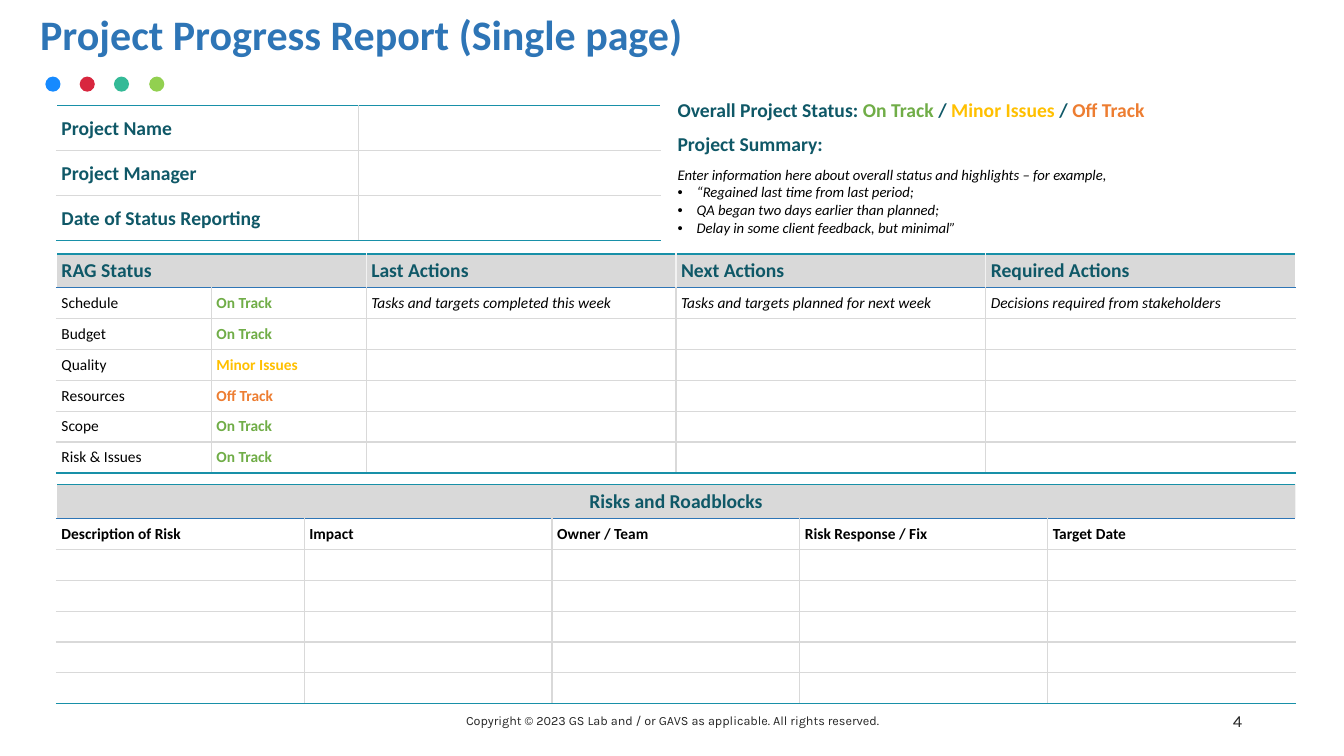
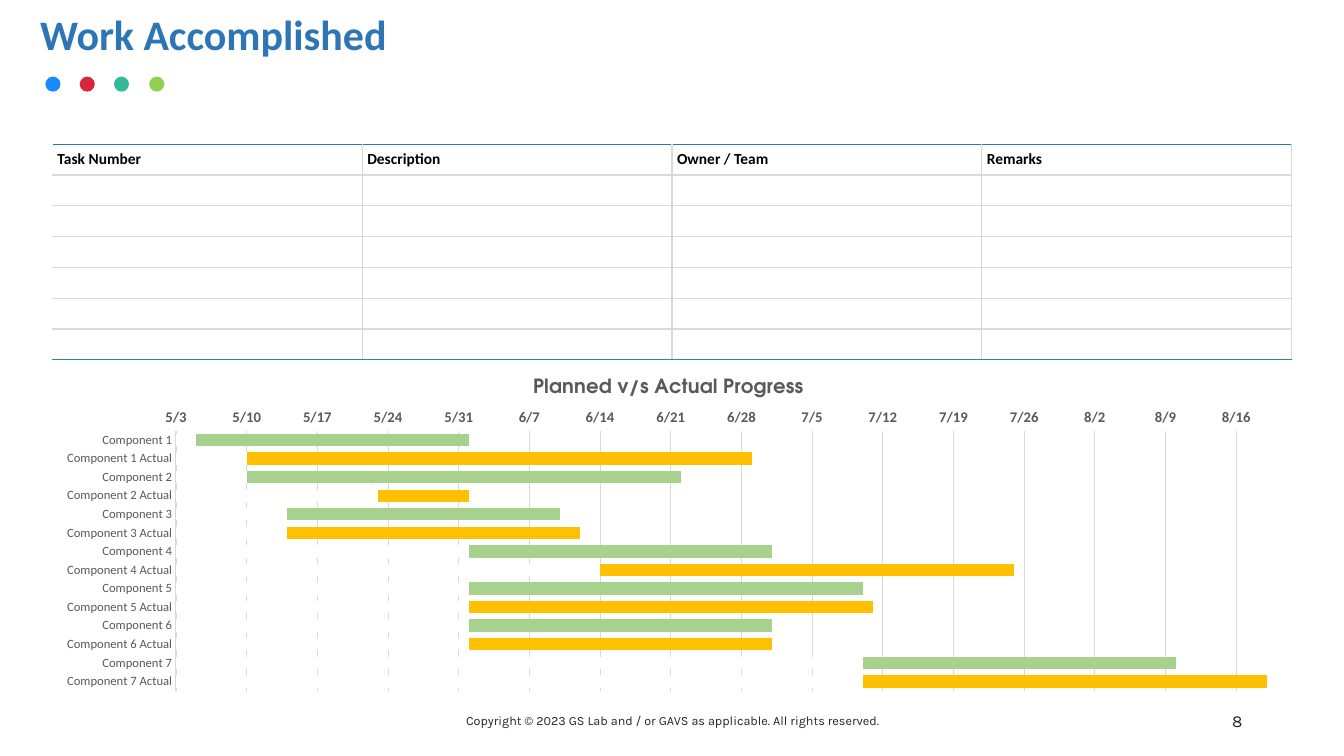
from dataclasses import dataclass, field
from typing import Any, NamedTuple

from lxml.etree import SubElement
from pptx import Presentation
from pptx.chart.data import CategoryChartData
from pptx.dml.color import RGBColor
from pptx.enum.chart import XL_CHART_TYPE as Kind, XL_TICK_MARK as Tick
from pptx.enum.shapes import MSO_SHAPE as Shape
from pptx.enum.text import MSO_ANCHOR as Anchor, PP_ALIGN as Align
from pptx.oxml import parse_xml
from pptx.oxml.ns import nsdecls, qn
from pptx.util import Emu, Pt

SCALE = 9144  # EMU in one px, at 100 px to the inch
WHITE, BLACK, INK, GRAY = "FFFFFF", "000000", "262626", "595959"
RULE, PALE, BLUE, TEAL, DEEP = "D9D9D9", "F2F2F2", "2E75B6", "1890A8", "0F5867"
GREEN, AMBER, ORANGE, LIME = "70AD47", "FFC000", "ED7D31", "A9D18E"
DOTS = ("168AFF", "D8263E", "34BA97", "92D050")
STATUS = {"On Track": GREEN, "Minor Issues": AMBER, "Off Track": ORANGE}
RIGHTS = "Copyright © 2023 GS Lab and / or GAVS as applicable. All rights reserved."
HEAD = {"size": 14, "color": DEEP, "bold": True}


class Area(NamedTuple):
    x: int
    y: int
    w: int
    h: int

    def emu(self) -> list[Emu]:
        return [px(v) for v in self]


class Bit(NamedTuple):
    text: str
    fmt: dict[str, Any]


@dataclass
class Line:
    bits: list[Bit]
    align: Align = Align.LEFT
    bullet: bool = False


Cell = list[Line]


@dataclass
class Grid:
    """A table: column weights, cells and the rules that colour its borders."""
    area: Area
    cols: list[int]
    rows: list[list[Cell]]
    top: str = TEAL
    end: str = TEAL
    side: str = WHITE
    head: int = 0  # height of a shaded first row
    span: int = 1  # cells merged at the left of that row
    ruled: bool = True
    heights: list[int] = field(default_factory=list)


def px(n: float) -> Emu:
    return Emu(round(n * SCALE))


def rgb(code: str) -> RGBColor:
    return RGBColor.from_string(code)


def style(font, size: float = 11, color: str = BLACK, bold: bool = False,
          italic: bool = False, face: str = "Calibri") -> None:
    font.size, font.bold, font.italic, font.name = Pt(size), bold, italic, face
    font.color.rgb = rgb(color)


def put(para, text: str, **fmt) -> None:
    run = para.add_run()
    run.text = text
    style(run.font, **fmt)


def box(slide, area: Area, text: str, align: Align = Align.LEFT,
        anchor: Anchor = Anchor.MIDDLE, space: float = 1.0, **fmt) -> None:
    frame = slide.shapes.add_textbox(*area.emu()).text_frame
    frame.word_wrap = True
    frame.vertical_anchor = anchor
    para = frame.paragraphs[0]
    para.alignment, para.line_spacing = align, space
    put(para, text, **fmt)


def one(text: str, align: Align = Align.LEFT, **fmt) -> Cell:
    """A cell with a single run, or an empty one."""
    return [Line([Bit(text, fmt)], align)] if text else []


def state(text: str) -> Cell:
    return one(text, color=STATUS[text], bold=True)


def blank(rows: int, cols: int) -> list[list[Cell]]:
    return [[[] for _ in range(cols)] for _ in range(rows)]


def dot(para) -> None:
    """Give a paragraph a black bullet with a hanging indent."""
    props = para._p.get_or_add_pPr()
    props.set("marL", str(px(19)))
    props.set("indent", str(px(-19)))
    tint = SubElement(props, qn("a:buClr"))
    SubElement(tint, qn("a:srgbClr"), val=BLACK)
    SubElement(props, qn("a:buFont"), typeface="Arial")
    SubElement(props, qn("a:buChar"), char="•")


def fill(cell, lines: Cell) -> None:
    cell.vertical_anchor = Anchor.MIDDLE
    cell.margin_left = cell.margin_right = px(5)
    cell.margin_top = cell.margin_bottom = px(5)
    frame = cell.text_frame
    if not lines:
        frame.paragraphs[0]._p.get_or_add_endParaRPr().set("sz", "1100")
    for i, line in enumerate(lines):
        para = frame.add_paragraph() if i else frame.paragraphs[0]
        para.alignment = line.align
        if line.bullet:
            dot(para)
        for bit in line.bits:
            put(para, bit.text, **bit.fmt)


def edge(cell, **sides: str) -> None:
    """Draw 1 pt borders; the sides come in the order L, R, T, B."""
    props = cell._tc.get_or_add_tcPr()
    for side, color in sides.items():
        props.append(parse_xml(
            f'<a:ln{side} {nsdecls("a")} w="12700"><a:solidFill>'
            f'<a:srgbClr val="{color}"/></a:solidFill></a:ln{side}>'))


def rule(cell, grid: Grid, r: int, c: int) -> None:
    """Pick the four border colours from the cell's place in the grid."""
    shade = grid.head and r == 0
    inner = PALE if shade else RULE
    under = {0: BLUE} if grid.head else {}
    under[len(grid.rows) - 1] = grid.end
    edge(cell,
         L=inner if c else WHITE,
         R=inner if c < len(grid.cols) - 1 else grid.side,
         T=under.get(r - 1, RULE) if r else grid.top,
         B=under.get(r, RULE))


def draw(slide, grid: Grid) -> None:
    count, area = len(grid.rows), grid.area
    table = slide.shapes.add_table(count, len(grid.cols), *area.emu()).table
    table.first_row = table.horz_banding = False
    for col, part in zip(table.columns, grid.cols):
        col.width = px(area.w * part / sum(grid.cols))
    rest = (area.h - grid.head) / (count - bool(grid.head))
    for r, row in enumerate(grid.rows):
        high = grid.heights[r] if grid.heights else rest
        table.rows[r].height = px(grid.head if grid.head and r == 0 else high)
        for c, lines in enumerate(row):
            cell = table.cell(r, c)
            fill(cell, lines)
            if grid.ruled:
                rule(cell, grid, r, c)
            if grid.head and r == 0:
                cell.fill.solid()
                cell.fill.fore_color.rgb = rgb(RULE)
            else:
                cell.fill.background()
    if grid.span > 1:
        table.cell(0, 0).merge(table.cell(0, grid.span - 1))


def base(deck, title: str, page: int):
    """Add a slide with the title, dots and footer that all slides share."""
    slide = deck.slides.add_slide(deck.slide_layouts[6])
    for i, color in enumerate(DOTS):
        spot = Area(45 + 103 * i // 3, 76, 15, 15)
        shape = slide.shapes.add_shape(Shape.OVAL, *spot.emu())
        shape.shadow.inherit = False
        shape.fill.solid()
        shape.fill.fore_color.rgb = rgb(color)
        shape.line.fill.background()
    box(slide, Area(30, 9, 1150, 56), title, anchor=Anchor.TOP, space=0.9,
        size=30, color=BLUE, bold=True)
    box(slide, Area(442, 695, 450, 40), RIGHTS, Align.CENTER,
        size=9, color=INK, face="Karla")
    box(slide, Area(942, 695, 300, 40), str(page), Align.RIGHT,
        size=12, color=INK, face="Karla")
    return slide


def report(deck) -> None:
    slide = base(deck, "Project Progress Report (Single page)", 4)
    facts = ("Project Name", "Project Manager", "Date of Status Reporting")
    draw(slide, Grid(Area(56, 105, 599, 134), [1, 1],
                     [[one(name, **HEAD), []] for name in facts]))

    lead = [Bit("Overall Project Status: ", HEAD)]
    for i, (name, color) in enumerate(STATUS.items()):
        if i:
            lead.append(Bit(" / ", HEAD))
        lead.append(Bit(name, HEAD | {"color": color}))
    notes = ("Enter information here about overall status and highlights – for example,",
             "“Regained last time from last period;",
             "QA began two days earlier than planned;",
             "Delay in some client feedback, but minimal”")
    body = [Line([Bit(note, {"size": 10.5, "italic": True})], bullet=i > 0)
            for i, note in enumerate(notes)]
    draw(slide, Grid(Area(667, 93, 619, 147), [1],
                     [[[Line(lead)]], [one("Project Summary:", **HEAD)], [body]],
                     ruled=False, heights=[33, 33, 81]))

    heads = ("RAG Status", "", "Last Actions", "Next Actions", "Required Actions")
    tasks = ("Tasks and targets completed this week",
             "Tasks and targets planned for next week",
             "Decisions required from stakeholders")
    marks = {"Schedule": "On Track", "Budget": "On Track", "Quality": "Minor Issues",
             "Resources": "Off Track", "Scope": "On Track", "Risk & Issues": "On Track"}
    rows = [[one(name, **HEAD) for name in heads]]
    for i, (name, mark) in enumerate(marks.items()):
        rows.append([one(name), state(mark)]
                    + [one("" if i else task, italic=True) for task in tasks])
    draw(slide, Grid(Area(56, 252, 1229, 217), [1, 1, 2, 2, 2], rows, head=33, span=2))

    names = ("Description of Risk", "Impact", "Owner / Team",
             "Risk Response / Fix", "Target Date")
    rows = [[one("Risks and Roadblocks", Align.CENTER, **HEAD)] + blank(1, 4)[0],
            [one(name, bold=True) for name in names]] + blank(5, 5)
    draw(slide, Grid(Area(56, 481, 1229, 217), [1] * 5, rows, head=33, span=5))


def place(owner, index: int, **spots: float) -> None:
    """Fix the spot of a chart part, in shares of the chart's size."""
    old = owner.find(qn("c:layout"))
    if old is not None:
        owner.remove(old)
    layout = parse_xml(f'<c:layout {nsdecls("c")}/>')
    owner.insert(index, layout)
    manual = SubElement(layout, qn("c:manualLayout"))
    if "w" in spots:
        SubElement(manual, qn("c:layoutTarget"), val="inner")
    for axis in "xy":
        SubElement(manual, qn(f"c:{axis}Mode"), val="edge")
    for key, share in spots.items():
        SubElement(manual, qn(f"c:{key}"), val=str(share))


def gantt(slide, area: Area) -> None:
    ends = (45809, 45837, 45830, 45809, 45818, 45820, 45839,
            45863, 45848, 45849, 45839, 45839, 45879, 45894)
    starts = (45782, 45787, 45787, 45800, 45791, 45791, 45809,
              45822, 45809, 45809, 45809, 45809, 45848, 45848)
    data = CategoryChartData()
    data.categories = [f"Component {n}{kind}" for n in range(1, 8)
                       for kind in ("", " Actual")]
    data.add_series("Series 1", ends)
    data.add_series("Series 2", starts)
    chart = slide.shapes.add_chart(Kind.BAR_CLUSTERED, *area.emu(), data).chart
    face = "TeX Gyre Adventor"
    style(chart.font, size=14, face=face)
    chart.has_legend = False
    title = chart.chart_title
    put(title.text_frame.paragraphs[0], "Planned v/s Actual Progress",
        size=14, color=GRAY, bold=True, face=face)
    place(title._element, 1, x=0.39, y=0.04)
    place(chart._chartSpace.chart.plotArea, 0, x=0.107, y=0.21, w=0.873, h=0.77)

    plot = chart.plots[0]
    plot.gap_width, plot.overlap, plot.vary_by_categories = 50, 100, False
    for series, color in zip(plot.series, (AMBER, WHITE)):
        series.invert_if_negative = False
        series.format.fill.solid()
        series.format.fill.fore_color.rgb = rgb(color)
    for i in range(0, len(ends), 2):
        paint = plot.series[0].points[i].format.fill
        paint.solid()
        paint.fore_color.rgb = rgb(LIME)

    cats, days = chart.category_axis, chart.value_axis
    for axis in (cats, days):
        axis.major_tick_mark = axis.minor_tick_mark = Tick.NONE
    cats.reverse_order = True
    style(cats.tick_labels.font, size=9, color=GRAY)
    style(days.tick_labels.font, size=10.5, color=GRAY, bold=True)
    days.minimum_scale, days.maximum_scale, days.major_unit = 45780, 45888, 7
    days.tick_labels.number_format = "m/d;@"
    days.tick_labels.number_format_is_linked = False
    days.format.line.fill.background()
    for part in (cats, days.major_gridlines):
        part.format.line.color.rgb = rgb(RULE)
        part.format.line.width = Pt(0.75)


def work(deck) -> None:
    slide = base(deck, "Work Accomplished", 8)
    names = ("Task Number", "Description", "Owner / Team", "Remarks")
    rows = [[one(name, bold=True) for name in names]] + blank(6, 4)
    draw(slide, Grid(Area(52, 143, 1229, 214), [1] * 4, rows, top=BLUE, side=RULE))
    gantt(slide, Area(42, 357, 1239, 335))


def main() -> None:
    deck = Presentation()
    deck.slide_width, deck.slide_height = px(1333), px(750)
    report(deck)
    work(deck)
    deck.save("out.pptx")


if __name__ == "__main__":
    main()
